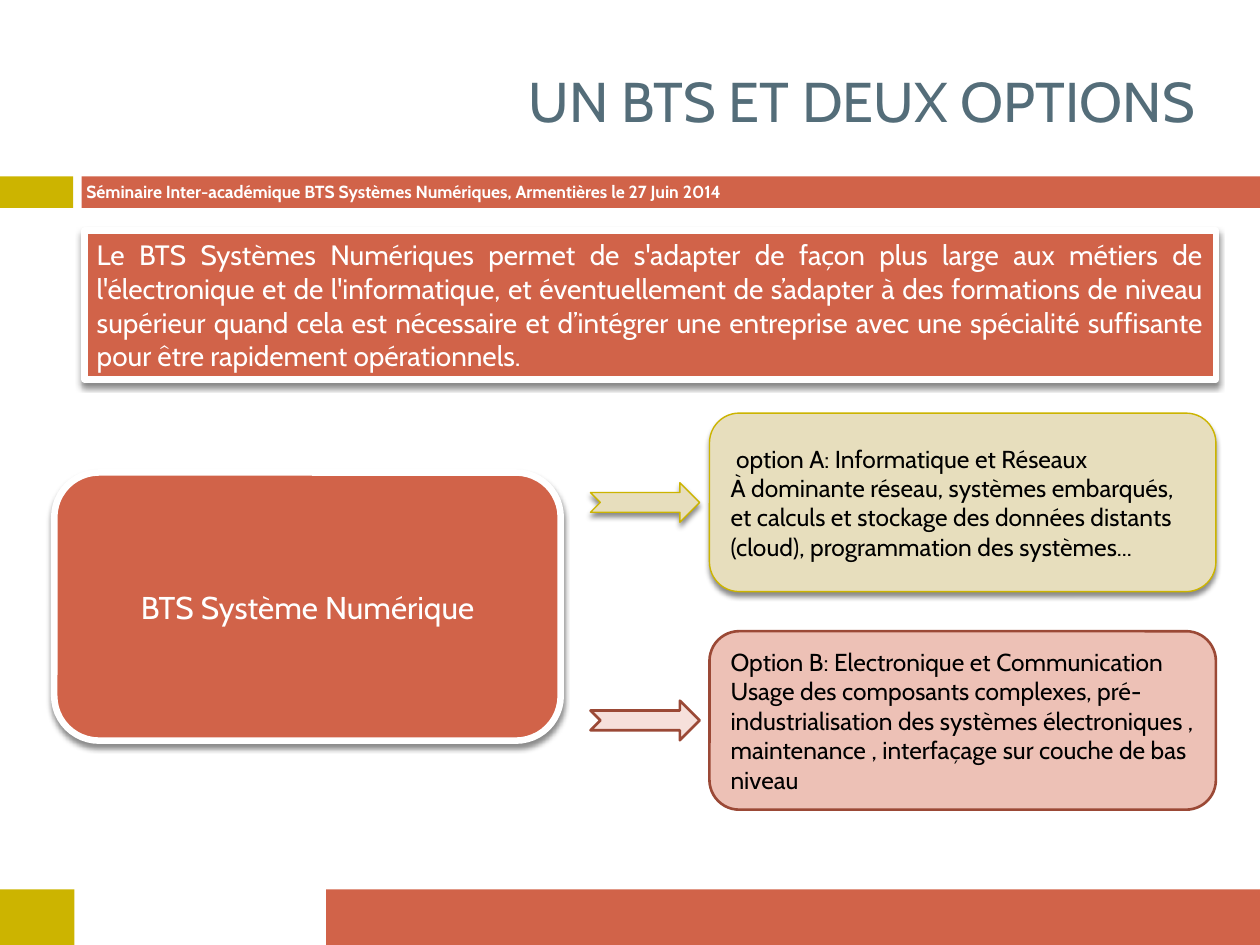
from lxml import etree
from pptx import Presentation
from pptx.dml.color import RGBColor
from pptx.enum import shapes, text
from pptx.oxml.ns import qn
from pptx.util import Pt

THEME = {
    "font": "Cabin",
    "gold": "CCB400", "rust": "D16349", "slate": "546D79", "dark_rust": "9B4936",
    "sand": "E7DEBD", "pink": "EDC1B6", "pale_pink": "F6E0DB",
    "white": "FFFFFF", "black": "000000",
    "title": 32, "degree": 18, "intro": 16, "option": 14, "seminar": 10,
    "thin": 0.79, "medium": 1.5, "thick": 3.75,
}

TITLE = "UN BTS ET DEUX OPTIONS"
SEMINAR = "Séminaire Inter-académique BTS Systèmes Numériques, Armentières le 27 Juin 2014"
INTRO = (
    "Le BTS Systèmes Numériques permet de s'adapter de façon plus large aux métiers de "
    "l'électronique et de l'informatique, et éventuellement de s’adapter à des formations de "
    "niveau supérieur quand cela est nécessaire et d’intégrer une entreprise avec une "
    "spécialité suffisante pour être rapidement opérationnels."
)
DEGREE = "BTS Système Numérique"
OPTIONS = [
    {
        "lines": [
            " option A: Informatique et Réseaux",
            "À dominante réseau, systèmes embarqués, et calculs et stockage des données "
            "distants (cloud), programmation des systèmes...",
        ],
        "fill": "sand", "arrow_fill": "sand", "line": "gold", "weight": "thin", "shadow": True,
    },
    {
        "lines": [
            "Option B: Electronique et Communication",
            "Usage des composants complexes, pré-industrialisation des systèmes électroniques , "
            "maintenance , interfaçage sur couche de bas niveau",
        ],
        "fill": "pink", "arrow_fill": "pale_pink", "line": "dark_rust", "weight": "medium",
        "shadow": False,
    },
]

SLIDE_WIDTH, SLIDE_HEIGHT = 720, 540
# top, height, right edge of the gold block, left edge of the rust block
BANDS = [(100.8, 18, 41.9, 46.6), (508.2, 31.8, 42.5, 186.4)]
OPTION_TOP, OPTION_STEP = 236.1, 124.6
ARROW_DROP = 39.7


def color(name):
    return RGBColor.from_string(THEME[name])


def write_text(shape, lines, size, ink, align=text.PP_ALIGN.LEFT,
               anchor=text.MSO_ANCHOR.MIDDLE, bold=False):
    frame = shape.text_frame
    frame.word_wrap = True
    frame.vertical_anchor = anchor
    for index, line in enumerate(lines):
        paragraph = frame.paragraphs[0] if index == 0 else frame.add_paragraph()
        paragraph.alignment = align
        run = paragraph.add_run()
        run.text = line
        run.font.name = THEME["font"]
        run.font.size = Pt(THEME[size])
        run.font.bold = bold
        run.font.color.rgb = color(ink)


def add_shadow(shape):
    effects = shape.element.spPr.find(qn("a:effectLst"))
    shadow = etree.SubElement(
        effects, qn("a:outerShdw"), blurRad=str(Pt(3)), dist=str(Pt(2.4)),
        dir="5400000", algn="ctr", rotWithShape="0")
    ink = etree.SubElement(shadow, qn("a:srgbClr"), val=THEME["black"])
    etree.SubElement(ink, qn("a:alpha"), val="45000")


def add_box(slide, kind, bounds, fill, line=None, weight="thin", shadow=False):
    shape = slide.shapes.add_shape(kind, *map(Pt, bounds))
    shape.fill.solid()
    shape.fill.fore_color.rgb = color(fill)
    if line:
        shape.line.color.rgb = color(line)
        shape.line.width = Pt(THEME[weight])
    else:
        shape.line.fill.background()
    shape.shadow.inherit = False
    if shadow:
        add_shadow(shape)
    return shape


def main():
    presentation = Presentation()
    presentation.slide_width, presentation.slide_height = Pt(SLIDE_WIDTH), Pt(SLIDE_HEIGHT)
    slide = presentation.slides.add_slide(presentation.slide_layouts[6])
    kinds = shapes.MSO_SHAPE

    for top, height, gold_right, rust_left in BANDS:
        add_box(slide, kinds.RECTANGLE, (0, top, gold_right, height), "gold")
        add_box(slide, kinds.RECTANGLE,
                (rust_left, top, SLIDE_WIDTH - rust_left, height), "rust")

    seminar = slide.shapes.add_textbox(*map(Pt, (42.3, 100.1, 436.3, 31.7)))
    write_text(seminar, [SEMINAR], "seminar", "white",
               anchor=text.MSO_ANCHOR.TOP, bold=True)
    title = slide.shapes.add_textbox(*map(Pt, (48, 18, 642.2, 78)))
    write_text(title, [TITLE], "title", "slate", align=text.PP_ALIGN.RIGHT)

    intro = add_box(slide, kinds.RECTANGLE, (48.2, 131.8, 646.6, 85),
                    "rust", "white", "thick", shadow=True)
    write_text(intro, [INTRO], "intro", "white", align=text.PP_ALIGN.JUSTIFY)
    degree = add_box(slide, kinds.ROUNDED_RECTANGLE, (31, 270, 289.4, 153.2),
                     "rust", "white", "thick", shadow=True)
    write_text(degree, [DEGREE], "degree", "white", align=text.PP_ALIGN.CENTER)

    for index, option in enumerate(OPTIONS):
        top = OPTION_TOP + index * OPTION_STEP
        outline = (option["line"], option["weight"], option["shadow"])
        add_box(slide, kinds.NOTCHED_RIGHT_ARROW, (337.4, top + ARROW_DROP, 62.4, 22.6),
                option["arrow_fill"], *outline)
        card = add_box(slide, kinds.ROUNDED_RECTANGLE, (405.4, top, 289.4, 102),
                       option["fill"], *outline)
        write_text(card, option["lines"], "option", "black")

    presentation.save("out.pptx")


if __name__ == "__main__":
    main()
